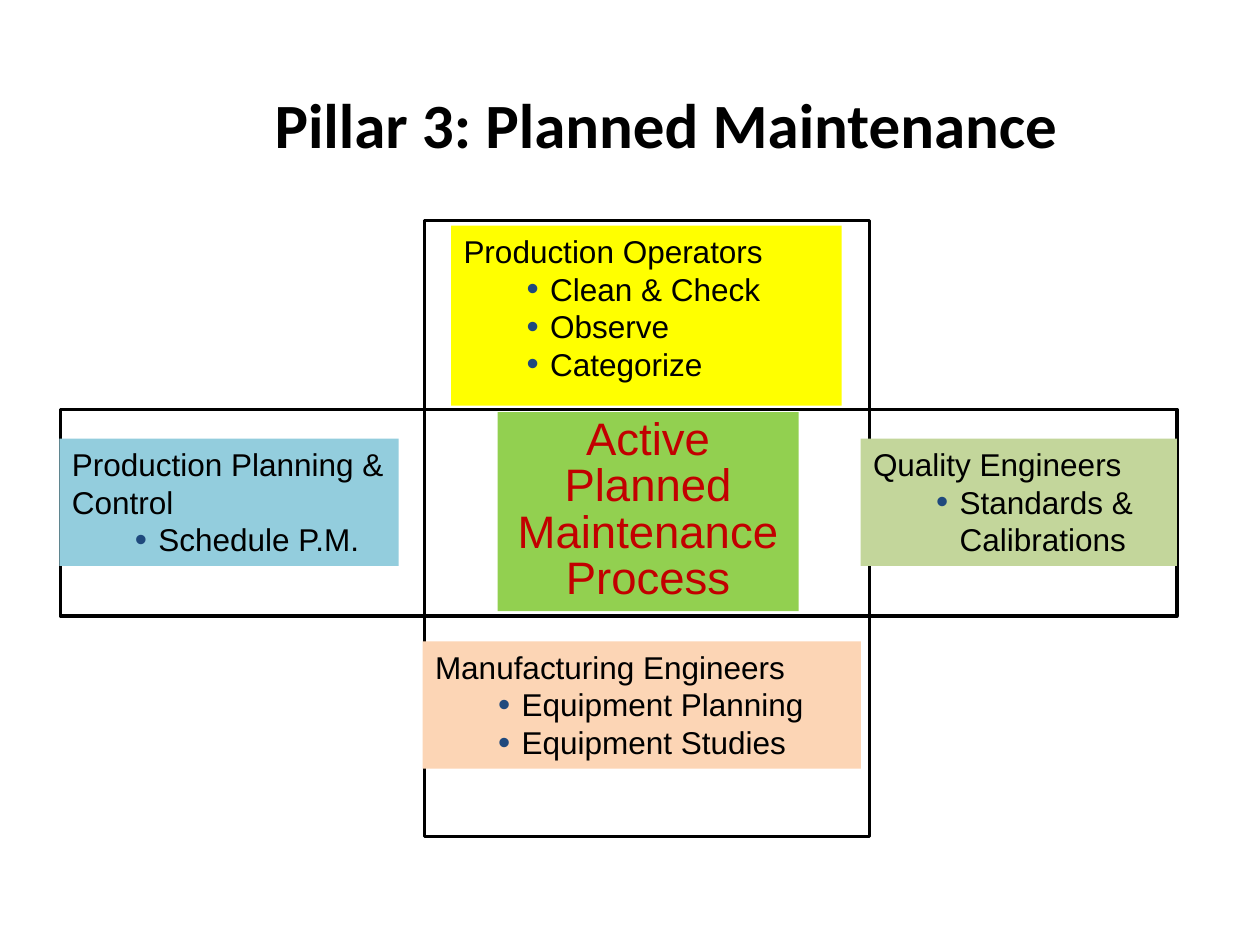
from lxml.etree import SubElement
from pptx import Presentation
from pptx.dml.color import RGBColor
from pptx.enum.shapes import MSO_SHAPE as Shape
from pptx.enum.text import MSO_ANCHOR as Anchor, PP_ALIGN as Align
from pptx.oxml.ns import qn
from pptx.util import Pt

BLACK = "000000"
ROLES = [
    ((257.8, 128.9, 223.2, 103), "FFFF00", "Production Operators",
     ["Clean & Check", "Observe", "Categorize"]),
    ((241.5, 366.5, 250.5, 72.7), "FCD5B5", "Manufacturing Engineers",
     ["Equipment Planning", "Equipment Studies"]),
    ((34, 250.6, 193.9, 72.7), "93CDDD", "Production Planning & Control",
     ["Schedule P.M."]),
    ((491.8, 250.6, 180.8, 72.7), "C3D69B", "Quality Engineers",
     ["Standards & Calibrations"]),
]


def color(value):
    return RGBColor.from_string(value)


def set_font(paragraph, name, size, value, bold=False):
    font = paragraph.font
    font.name, font.size, font.bold = name, Pt(size), bold
    font.color.rgb = color(value)


def add_rectangle(slide, box, fill=None):
    """Filled without an outline, or outlined in black without a fill."""
    shape = slide.shapes.add_shape(Shape.RECTANGLE, *map(Pt, box))
    shape.shadow.inherit = False
    if fill:
        shape.fill.solid()
        shape.fill.fore_color.rgb = color(fill)
        shape.line.fill.background()
    else:
        shape.fill.background()
        shape.line.color.rgb = color(BLACK)
        shape.line.width = Pt(2)
    return shape


def add_bullet(paragraph):
    paragraph.level = 1
    properties = paragraph._p.get_or_add_pPr()
    properties.set("marL", str(Pt(49.5)))
    properties.set("indent", str(Pt(-13.5)))
    bullet_color = SubElement(properties, qn("a:buClr"))
    SubElement(bullet_color, qn("a:srgbClr"), val="1F497D")
    SubElement(properties, qn("a:buSzPct"), val="110000")
    SubElement(properties, qn("a:buFont"), typeface="Arial")
    SubElement(properties, qn("a:buChar"), char="•")


def write_lines(shape, lines):
    """Write one paragraph a line and return the paragraphs."""
    frame = shape.text_frame
    frame.vertical_anchor = Anchor.TOP
    frame.text = "\n".join(lines)
    return frame.paragraphs


def add_role(slide, box, fill, heading, duties):
    shape = add_rectangle(slide, box, fill)
    shape.text_frame.word_wrap = True
    for index, paragraph in enumerate(write_lines(shape, [heading, *duties])):
        paragraph.alignment = Align.LEFT
        if index:
            add_bullet(paragraph)
        set_font(paragraph, "Arial", 18, BLACK)


def add_process(slide):
    shape = add_rectangle(slide, (284.4, 235.6, 172, 113.6), "92D050")
    shape.text_frame.word_wrap = False
    lines = ["Active", "Planned", "Maintenance", "Process"]
    for paragraph in write_lines(shape, lines):
        paragraph.alignment = Align.CENTER
        paragraph.line_spacing = 0.85
        set_font(paragraph, "Arial", 26, "C20000")


def add_title(slide):
    title = slide.shapes.add_textbox(Pt(149.8), Pt(36), Pt(570.2), Pt(68.4))
    frame = title.text_frame
    frame.word_wrap = True
    frame.vertical_anchor = Anchor.MIDDLE
    frame.text = "Pillar 3: Planned Maintenance"
    set_font(frame.paragraphs[0], "Calibri", 36, BLACK, bold=True)


def main():
    presentation = Presentation()
    presentation.slide_width, presentation.slide_height = Pt(720), Pt(540)
    slide = presentation.slides.add_slide(presentation.slide_layouts[6])
    add_rectangle(slide, (34.6, 234, 637.9, 118.1))
    add_rectangle(slide, (242.6, 126, 254.2, 352.1))
    for role in ROLES:
        add_role(slide, *role)
    add_process(slide)
    add_title(slide)
    presentation.save("out.pptx")


if __name__ == "__main__":
    main()
